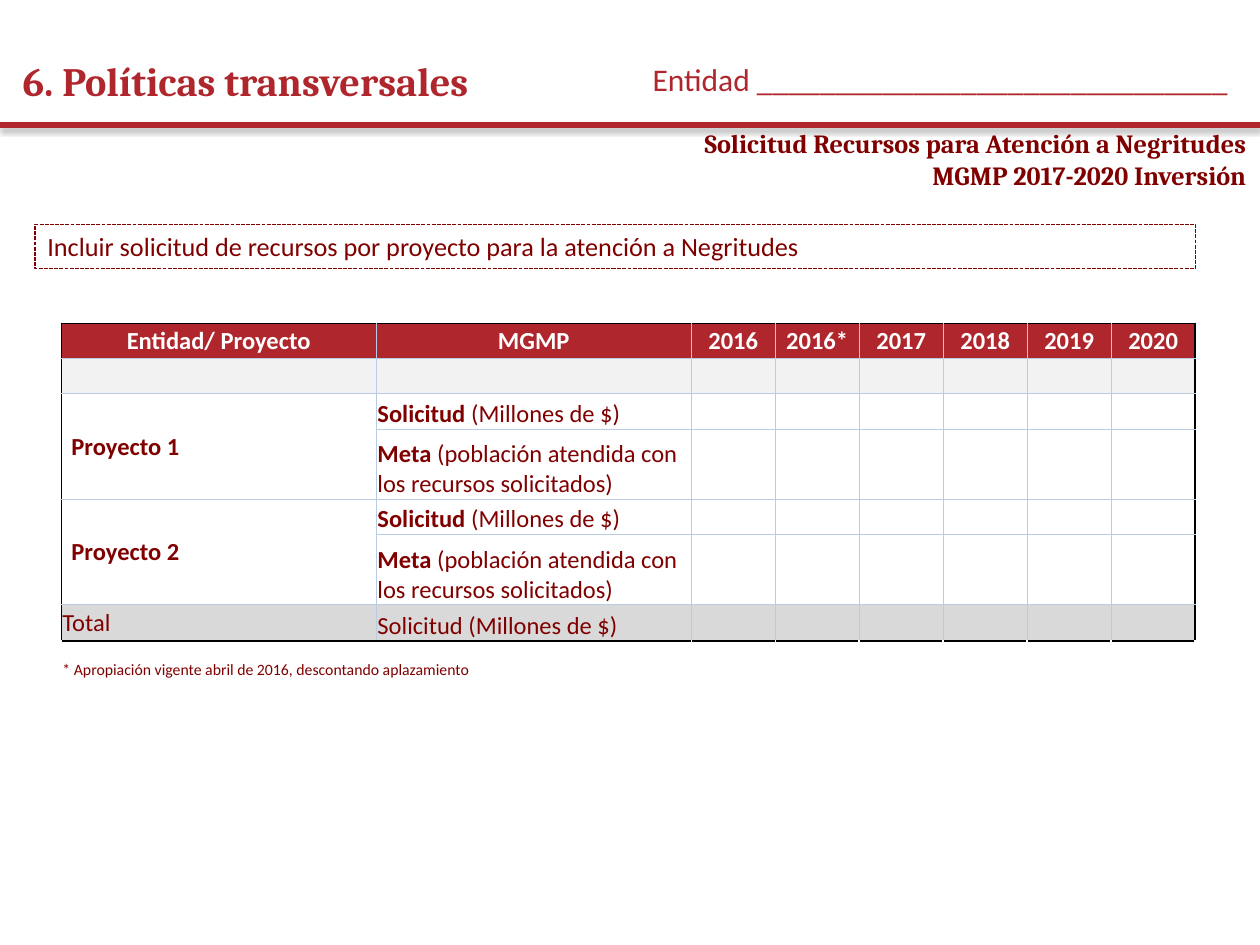
import pptx
import pptx.util
import pptx.dml.color
import pptx.enum.dml
import pptx.enum.shapes
import pptx.enum.text
from lxml import etree
from pptx.oxml.ns import qn

Pt = pptx.util.Pt
ALIGN = pptx.enum.text.PP_ALIGN
ANCHOR = pptx.enum.text.MSO_ANCHOR
RED, WINE, WHITE, BLACK = "AF272D", "800000", "FFFFFF", "000000"
PALE, GREY, BLUE = "F2F2F2", "D9D9D9", "B8CCE4"

# Content: text boxes as lines, place, size, font, colour, bold, align, anchor
BOXES = [
    (["Solicitud Recursos para Atención a Negritudes", "MGMP 2017-2020 Inversión"],
     (100.8, 77, 618.5, 28), 15, "Cambria", WINE, True, ALIGN.RIGHT, ANCHOR.MIDDLE),
    (["6. Políticas transversales"],
     (5.8, 26, 597.6, 39.6), 23, "Cambria", RED, True, ALIGN.LEFT, ANCHOR.MIDDLE),
    (["Entidad " + "_" * 30],
     (304.6, 31, 404, 28.8), 18, "Calibri", RED, False, ALIGN.RIGHT, ANCHOR.TOP),
]
NOTICE = "Incluir solicitud de recursos por proyecto para la atención a Negritudes"
HEAD = ["Entidad/ Proyecto", "MGMP", "2016", "2016*", "2017", "2018", "2019", "2020"]
PLANS = ["Proyecto 1", "Proyecto 2"]
GOALS = [("Solicitud", " (Millones de $)"),
         ("Meta", " (población atendida con los recursos solicitados)")]
TOTAL = ["Total", "Solicitud (Millones de $)"]
NOTE = "* Apropiación vigente abril de 2016, descontando aplazamiento"
WIDTHS = [180, 180] + [48] * 6
HEIGHTS = [20.1, 20.1, 20.1, 40.2, 20.1, 40.2, 20.6, 22.3]
SUM, LAST = 6, 7  # total row; last row (footnote) and last column


def color(code):
    return pptx.dml.color.RGBColor.from_string(code)


def style(para, size, face, code, bold, align=ALIGN.LEFT):
    para.alignment = align
    font = para.font
    font.size, font.name, font.bold = Pt(size), face, bold
    font.color.rgb = color(code)


def edge(cell, side, code, width):
    line = etree.SubElement(cell._tc.get_or_add_tcPr(), qn("a:ln" + side),
                            w=str(Pt(width)))
    fill = etree.SubElement(line, qn("a:solidFill"))
    etree.SubElement(fill, qn("a:srgbClr"), val=code)


def frame(cell, row, col):
    """Black around the grid, thin blue inside, nothing around the footnote."""
    outer = {"L": col == 0, "R": col == LAST, "T": row in (0, LAST), "B": row == SUM}
    for side, rim in outer.items():
        if row < LAST or side == "T":
            edge(cell, side, *((BLACK, 1) if rim else (BLUE, 0.5)))


def write(cell, parts, code=WINE, bold=False, align=ALIGN.LEFT,
          anchor=ANCHOR.MIDDLE, left=0.7, size=14):
    cell.vertical_anchor = anchor
    cell.margin_left = Pt(left)
    para = cell.text_frame.paragraphs[0]
    for part in parts:
        para.add_run().text = part
    style(para, size, "Calibri", code, bold, align)


deck = pptx.Presentation()
deck.slide_width, deck.slide_height = Pt(720), Pt(540)
slide = deck.slides.add_slide(deck.slide_layouts[6])
shapes = slide.shapes

# Rule under the title, with a soft shadow
rule = shapes.add_connector(pptx.enum.shapes.MSO_CONNECTOR.STRAIGHT,
                            Pt(0), Pt(71.5), Pt(720), Pt(71.5))
rule.line.color.rgb = color(RED)
rule.line.width = Pt(3)
glow = etree.SubElement(rule._element.spPr, qn("a:effectLst"))
shade = etree.SubElement(glow, qn("a:outerShdw"), blurRad=str(Pt(3.1)),
                         dist=str(Pt(1.8)), dir="5400000", rotWithShape="0")
tint = etree.SubElement(shade, qn("a:srgbClr"), val=BLACK)
etree.SubElement(tint, qn("a:alpha"), val="35000")

# Dashed notice
box = shapes.add_shape(pptx.enum.shapes.MSO_SHAPE.RECTANGLE,
                       Pt(20), Pt(128.2), Pt(663.2), Pt(25.4))
box.shadow.inherit = False
box.fill.background()
box.line.color.rgb = color(WINE)
box.line.width = Pt(0.75)
box.line.dash_style = pptx.enum.dml.MSO_LINE.SQUARE_DOT
box.text_frame.word_wrap = True
box.text_frame.vertical_anchor = ANCHOR.TOP
box.text_frame.text = NOTICE
style(box.text_frame.paragraphs[0], 15, "Calibri", WINE, False)

# Titles
for lines, place, size, face, code, bold, align, anchor in BOXES:
    text = shapes.add_textbox(*map(Pt, place)).text_frame
    text.word_wrap = True
    text.vertical_anchor = anchor
    text.text = "\n".join(lines)
    for para in text.paragraphs:
        style(para, size, face, code, bold, align)

# Table grid
table = shapes.add_table(len(HEIGHTS), len(WIDTHS), Pt(35), Pt(184.8),
                         Pt(sum(WIDTHS)), Pt(sum(HEIGHTS))).table
table.first_row = table.horz_banding = False
for col, width in zip(table.columns, WIDTHS):
    col.width = Pt(width)
for row, height in zip(table.rows, HEIGHTS):
    row.height = Pt(height)
fills = {0: RED, 1: PALE, SUM: GREY}
for r in range(len(HEIGHTS)):
    for c in range(len(WIDTHS)):
        cell = table.cell(r, c)
        cell.margin_left = cell.margin_right = cell.margin_top = Pt(0.7)
        cell.margin_bottom = Pt(0)
        frame(cell, r, c)
        if r in fills:
            cell.fill.solid()
            cell.fill.fore_color.rgb = color(fills[r])
        else:
            cell.fill.background()

# Table text
for c, name in enumerate(HEAD):
    write(table.cell(0, c), [name], WHITE, True, ALIGN.CENTER)
for i, plan in enumerate(PLANS):
    top = 2 + 2 * i
    table.cell(top, 0).merge(table.cell(top + 1, 0))
    write(table.cell(top, 0), [plan], bold=True, left=5.8)
    for j, goal in enumerate(GOALS):
        cell = table.cell(top + j, 1)
        write(cell, goal, anchor=ANCHOR.BOTTOM)
        cell.text_frame.paragraphs[0].runs[0].font.bold = True
write(table.cell(SUM, 0), TOTAL[:1])
write(table.cell(SUM, 1), TOTAL[1:], anchor=ANCHOR.BOTTOM)
table.cell(LAST, 0).merge(table.cell(LAST, 1))
write(table.cell(LAST, 0), [NOTE], anchor=ANCHOR.BOTTOM, size=9)

# Empty cells keep the body size, so that rows do not grow
for cell in table.iter_cells():
    if not cell.text_frame.text:
        etree.SubElement(cell.text_frame.paragraphs[0]._p,
                         qn("a:endParaRPr"), sz="1400")

deck.save("out.pptx")
